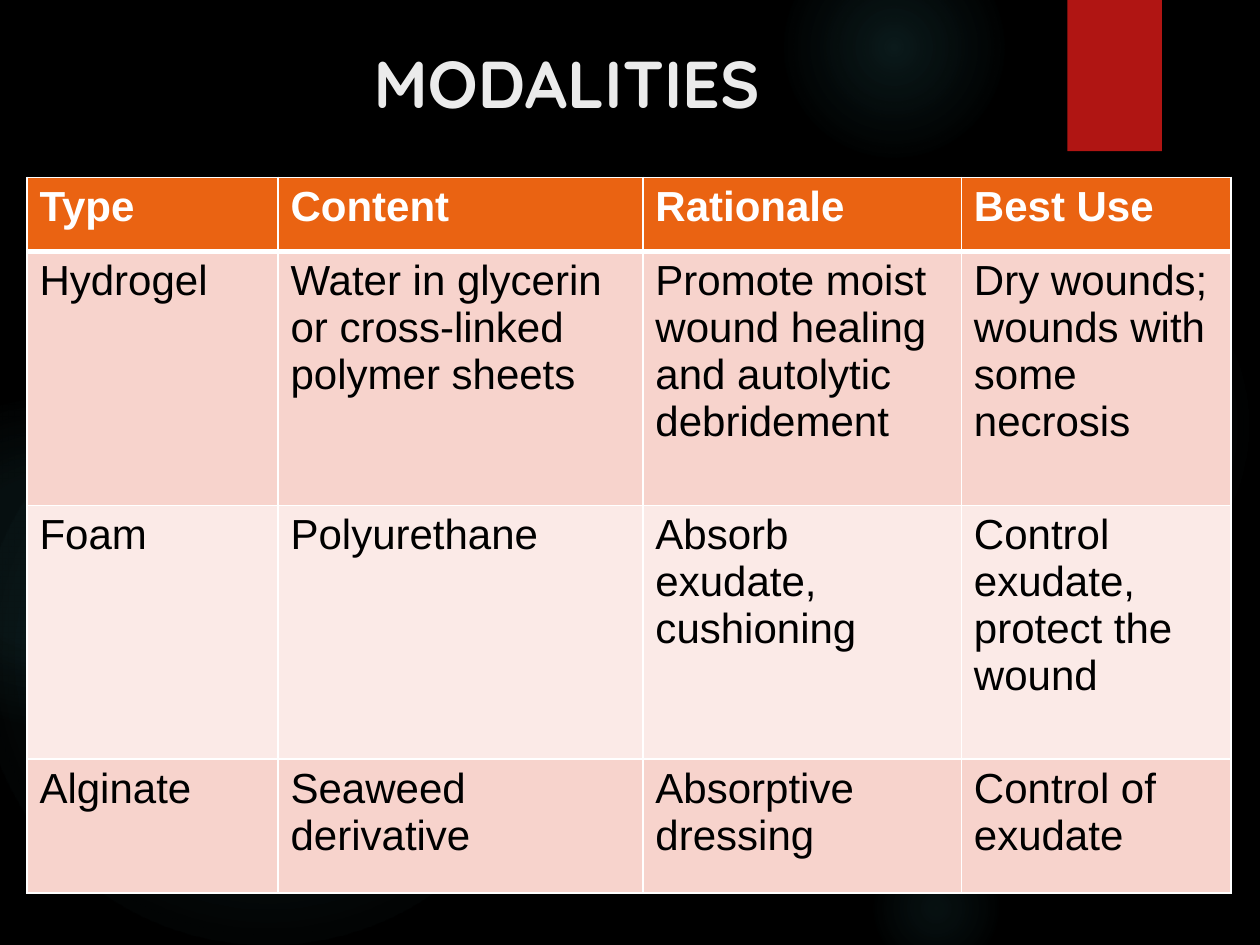
from dataclasses import dataclass

from lxml import etree
from pptx import Presentation
from pptx.dml.color import RGBColor
from pptx.enum import shapes, text
from pptx.oxml import ns
from pptx.util import Pt


@dataclass(frozen=True)
class Theme:
    back: str = "000000"
    glow: str = "50B9C1"
    ribbon: str = "B01513"
    title: str = "EBEBEB"
    header: str = "EA6312"
    bands: tuple = ("F7D3CC", "FBEAE7")
    light: str = "FFFFFF"
    dark: str = "000000"
    title_font: str = "Quicksand"
    body_font: str = "Arial"
    title_size: float = 37.8
    body_size: float = 24


T = Theme()

# Box in points, then (position %, opacity %) stops
GLOWS = [
    ((496, 132, 222, 222), [(0, 7), (36, 6), (69, 0)]),
    ((448, -36, 126, 126), [(0, 14), (36, 7), (73, 0)]),
    ((496, 480, 78, 78), [(0, 9), (36, 5), (66, 0)]),
    ((-12, 210, 330, 330), [(0, 11), (36, 10), (75, 0)]),
    ((-66, 228, 186, 186), [(0, 8), (36, 8), (72, 0)]),
]
COLUMNS = [143.5, 208.5, 182, 154]
HEIGHTS = [42.5, 145, 145, 76.5]
ROWS = [
    ["Type", "Content", "Rationale", "Best Use"],
    ["Hydrogel", "Water in glycerin or cross-linked polymer sheets",
     "Promote moist wound healing and autolytic debridement",
     "Dry wounds; wounds with some necrosis"],
    ["Foam", "Polyurethane", "Absorb exudate, cushioning",
     "Control exudate, protect the wound"],
    ["Alginate", "Seaweed derivative", "Absorptive dressing",
     "Control of exudate"],
]


def rgb(color):
    return RGBColor.from_string(color)


def xml_node(tag, **attrs):
    node = etree.Element(ns.qn(tag))
    for name, value in attrs.items():
        node.set(name, str(value))
    return node


def add_color(parent, color, opacity=100):
    node = xml_node("a:srgbClr", val=color)
    if opacity < 100:
        node.append(xml_node("a:alpha", val=opacity * 1000))
    parent.append(node)
    return parent


def format_run(r, color, **values):
    for name, value in values.items():
        setattr(r.font, name, value)
    r.font.color.rgb = rgb(color)


def set_insets(target, x, y):
    margins = {"margin_left": x, "margin_right": x,
               "margin_top": y, "margin_bottom": y}
    for name, value in margins.items():
        setattr(target, name, Pt(value))


def add_plain_shape(slide, kind, box):
    s = slide.shapes.add_shape(kind, *map(Pt, box))
    s.shadow.inherit = False
    s.line.fill.background()
    return s


def add_glow(slide, box, stops):
    s = add_plain_shape(slide, shapes.MSO_SHAPE.OVAL, box)
    s.fill.background()
    grad, stop_list = xml_node("a:gradFill", rotWithShape=1), xml_node("a:gsLst")
    for pos, opacity in stops:
        stop_list.append(add_color(xml_node("a:gs", pos=pos * 1000), T.glow, opacity))
    radial = xml_node("a:path", path="circle")
    radial.append(xml_node("a:fillToRect", l=50000, t=50000, r=50000, b=50000))
    grad.extend([stop_list, radial])
    props = s._element.spPr
    props.replace(props.find(ns.qn("a:noFill")), grad)


def add_ribbon(slide, box):
    s = add_plain_shape(slide, shapes.MSO_SHAPE.RECTANGLE, box)
    s.fill.solid()
    s.fill.fore_color.rgb = rgb(T.ribbon)
    shadow = xml_node("a:outerShdw", blurRad=Pt(3), dist=Pt(2), dir=5400000)
    s._element.spPr.find(ns.qn("a:effectLst")).append(
        add_color(shadow, T.dark, 45))


def add_title(slide, box):
    tf = slide.shapes.add_textbox(*map(Pt, box)).text_frame
    tf.word_wrap = True
    tf.vertical_anchor = text.MSO_ANCHOR.MIDDLE
    set_insets(tf, 0, 0)
    p = tf.paragraphs[0]
    p.alignment = text.PP_ALIGN.CENTER
    r = p.add_run()
    r.text = "MODALITIES"
    format_run(r, T.title, name=T.title_font, size=Pt(T.title_size), bold=True)


def set_borders(cell, widths):
    props = cell._tc.get_or_add_tcPr()
    for side, width in widths.items():
        line = xml_node(f"a:ln{side}", w=Pt(width))
        line.append(add_color(xml_node("a:solidFill"), T.light))
        props.append(line)


def add_modality_table(slide, box):
    table = slide.shapes.add_table(len(ROWS), len(COLUMNS), *map(Pt, box)).table
    for column, width in zip(table.columns, COLUMNS):
        column.width = Pt(width)
    for i, (row, height, words) in enumerate(zip(table.rows, HEIGHTS, ROWS)):
        row.height = Pt(height)
        head = i == 0
        fill = T.header if head else T.bands[(i - 1) % 2]
        widths = {"L": 1, "R": 1, "T": 3 if i == 1 else 1, "B": 3 if head else 1}
        for cell, word in zip(row.cells, words):
            set_borders(cell, widths)
            set_insets(cell, 7.2, 3.6)
            cell.fill.solid()
            cell.fill.fore_color.rgb = rgb(fill)
            r = cell.text_frame.paragraphs[0].add_run()
            r.text = word
            format_run(r, T.light if head else T.dark, name=T.body_font,
                       size=Pt(T.body_size), bold=head)


def main():
    prs = Presentation()
    prs.slide_width, prs.slide_height = Pt(720), Pt(540)
    slide = prs.slides.add_slide(prs.slide_layouts[6])
    slide.background.fill.solid()
    slide.background.fill.fore_color.rgb = rgb(T.back)

    # Backdrop
    for box, stops in GLOWS:
        add_glow(slide, box, stops)
    add_ribbon(slide, (610, 0, 54, 86.4))

    # Content
    add_title(slide, (40, 22, 567.5, 50))
    add_modality_table(slide, (15.4, 101.3, sum(COLUMNS), sum(HEIGHTS)))
    prs.save("out.pptx")


if __name__ == "__main__":
    main()
